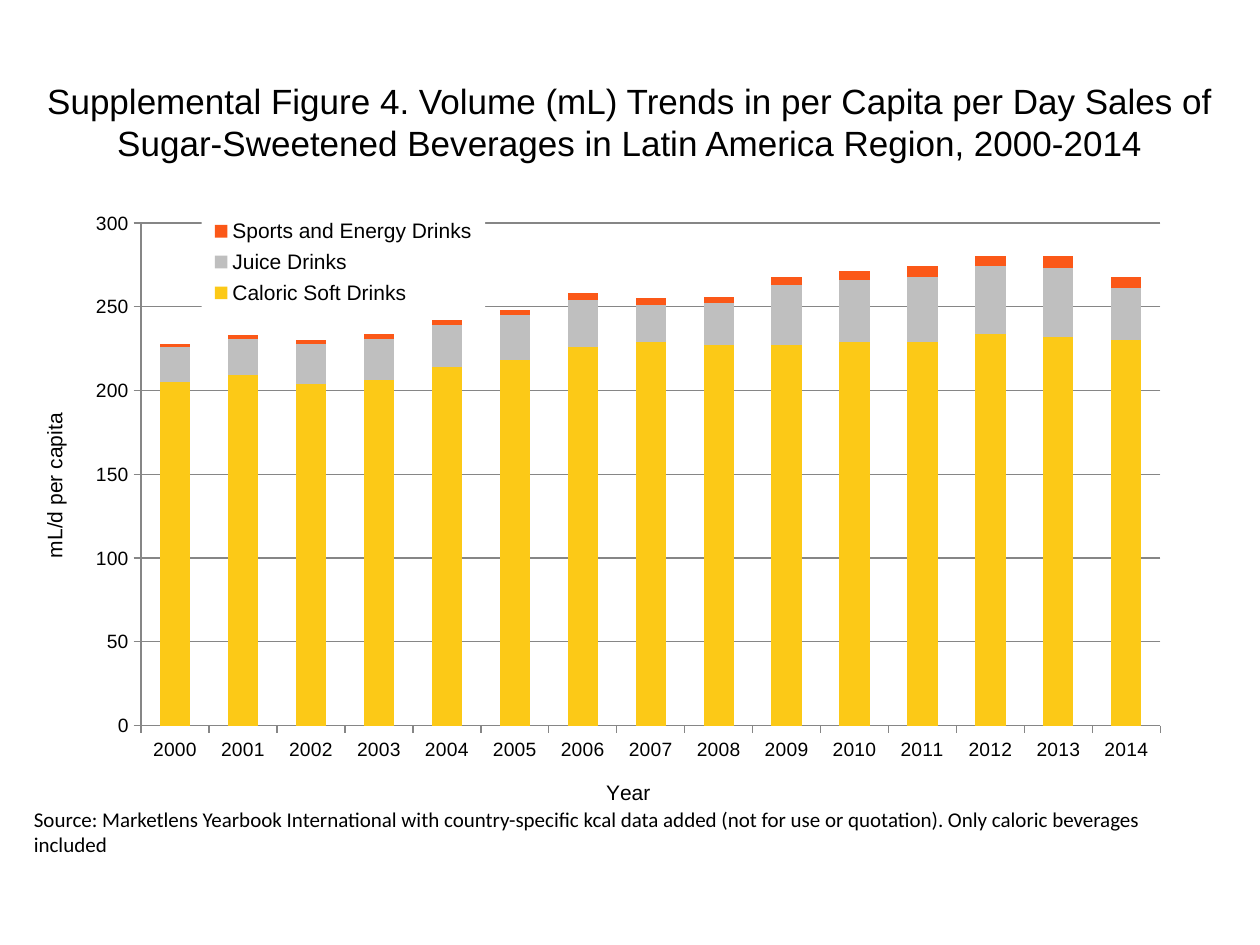
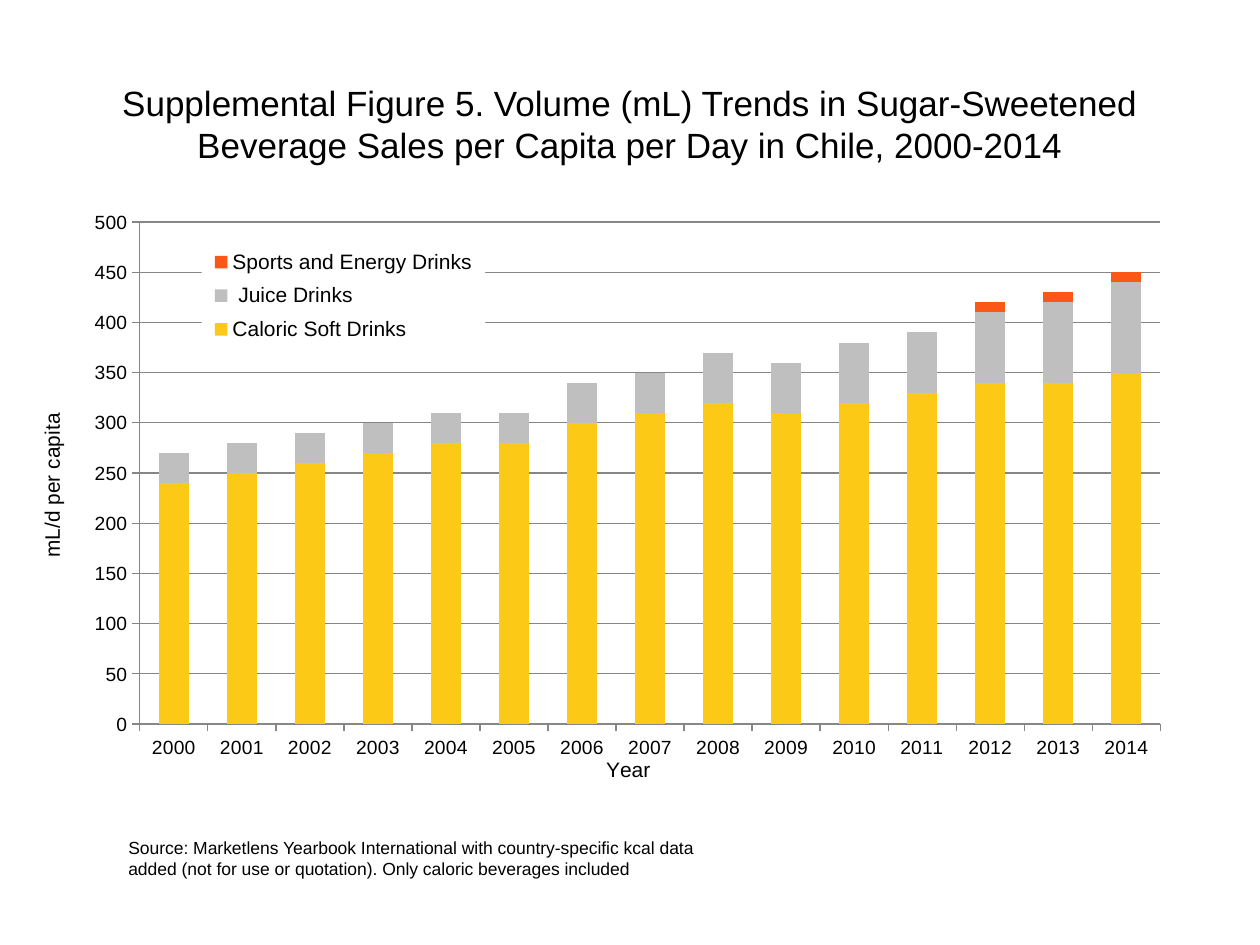
from dataclasses import dataclass

from lxml import etree
from pptx import Presentation
from pptx.chart.data import CategoryChartData
from pptx.dml.color import RGBColor
from pptx.enum.chart import XL_CHART_TYPE, XL_LEGEND_POSITION, XL_TICK_MARK
from pptx.enum.text import MSO_ANCHOR, MSO_AUTO_SIZE, PP_ALIGN
from pptx.oxml import parse_xml
from pptx.oxml.ns import nsdecls, qn
from pptx.util import Inches, Pt

STACKED = XL_CHART_TYPE.COLUMN_STACKED
RIGHT = XL_LEGEND_POSITION.RIGHT
OUTSIDE = XL_TICK_MARK.OUTSIDE
TOP, MIDDLE = MSO_ANCHOR.TOP, MSO_ANCHOR.MIDDLE
NO_FIT = MSO_AUTO_SIZE.NONE
CENTER, LEFT = PP_ALIGN.CENTER, PP_ALIGN.LEFT
TITLE_ONLY = 5

COLORS = {
    "text": "000000",
    "axis": "868686",
    "soft": "FCC917",
    "juice": "BFBFBF",
    "sports": "FB5818",
}
SERIES_COLORS = ("soft", "juice", "sports")
YEARS = [str(year) for year in range(2000, 2015)]
SOURCE = (
    "Source: Marketlens Yearbook International with country-specific kcal data "
    "added (not for use or quotation). Only caloric beverages included"
)


@dataclass(frozen=True)
class Box:
    """Left, top, width and height on the slide, in inches."""
    x: float
    y: float
    w: float = 0
    h: float = 0

    def emu(self) -> tuple:
        return tuple(Inches(v) for v in (self.x, self.y, self.w, self.h))


@dataclass(frozen=True)
class Figure:
    title: str
    title_box: Box
    title_anchor: MSO_ANCHOR
    chart_box: Box
    plot_box: Box
    legend_box: Box
    year_label: Box
    value_label: Box
    axis_max: int
    series: dict
    source_box: Box
    source_font: dict


FIGURES = [
    Figure(
        title="Supplemental Figure 4. Volume (mL) Trends in per Capita per Day Sales "
              "of Sugar-Sweetened Beverages in Latin America Region, 2000-2014",
        title_box=Box(0, 0.58, 10, 1.08),
        title_anchor=TOP,
        chart_box=Box(0.25, 0.6, 9.82, 6.08),
        plot_box=Box(1.12, 1.77, 8.09, 3.99),
        legend_box=Box(1.6, 1.68, 2.25, 0.8),
        year_label=Box(4.78, 6.16),
        value_label=Box(0.3, 3.25),
        axis_max=300,
        series={
            "Caloric Soft Drinks": (205, 209, 204, 206, 214, 218, 226, 229,
                                    227, 227, 229, 229, 234, 232, 230),
            "Juice Drinks": (21, 22, 24, 25, 25, 27, 28, 22,
                             25, 36, 37, 39, 40, 41, 31),
            "Sports and Energy Drinks": (2, 2, 2, 3, 3, 3, 4, 4,
                                         4, 5, 5, 6, 6, 7, 7),
        },
        source_box=Box(0.17, 6.35, 9.42, 0.5),
        source_font={"name": "Calibri", "size": Pt(12)},
    ),
    Figure(
        title="Supplemental Figure 5. Volume (mL) Trends in Sugar-Sweetened\v"
              "Beverage Sales per Capita per Day in Chile, 2000-2014",
        title_box=Box(0, 0.41, 10, 1.14),
        title_anchor=MIDDLE,
        chart_box=Box(0, 0.92, 10, 5.33),
        plot_box=Box(1.11, 1.77, 8.1, 4.02),
        legend_box=Box(1.6, 1.91, 2.25, 0.9),
        year_label=Box(4.78, 6.02),
        value_label=Box(0.28, 3.28),
        axis_max=500,
        series={
            "Caloric Soft Drinks": (240, 250, 260, 270, 280, 280, 300, 310,
                                    320, 310, 320, 330, 340, 340, 350),
            " Juice Drinks": (30, 30, 30, 30, 30, 30, 40, 40,
                              50, 50, 60, 60, 70, 80, 90),
            "Sports and Energy Drinks": (0,) * 12 + (10,) * 3,
        },
        source_box=Box(0.92, 6.59, 5, 0.44),
        source_font={"name": "Arial", "size": Pt(10)},
    ),
]


def rgb(key: str) -> RGBColor:
    return RGBColor.from_string(COLORS[key])


def set_font(font, **values) -> None:
    values = {"name": "Arial", "bold": False, **values}
    for name, value in values.items():
        setattr(font, name, value)
    font.color.rgb = rgb("text")


def set_layout(el, index: int, box: Box, chart_box: Box) -> None:
    """Pin a chart part to a place on the slide."""
    for old in el.findall(qn("c:layout")):
        el.remove(old)
    layout = parse_xml(f"<c:layout {nsdecls('c')}/>")
    manual = etree.SubElement(layout, qn("c:manualLayout"))
    values = {}
    if index == 0:
        values["layoutTarget"] = "inner"
    values.update(xMode="edge", yMode="edge",
                  x=(box.x - chart_box.x) / chart_box.w,
                  y=(box.y - chart_box.y) / chart_box.h)
    if box.w:
        values.update(w=box.w / chart_box.w, h=box.h / chart_box.h)
    for tag, value in values.items():
        text = value if isinstance(value, str) else f"{value:.4f}"
        etree.SubElement(manual, qn(f"c:{tag}")).set("val", text)
    el.insert(index, layout)


def format_axis(axis, label: str, place: Box, chart_box: Box, rot: int) -> None:
    tf = axis.axis_title.text_frame
    tf.text = label
    set_font(tf.paragraphs[0].runs[0].font, size=Pt(12))
    body = tf._txBody.bodyPr
    body.set("rot", str(rot))
    body.set("vert", "horz")
    set_layout(axis.axis_title._element, 1, place, chart_box)
    set_font(axis.tick_labels.font, size=Pt(11))
    axis.major_tick_mark = OUTSIDE
    axis.format.line.color.rgb = rgb("axis")
    axis.format.line.width = Pt(0.75)


def add_legend(chart, fig: Figure) -> None:
    chart.has_legend = True
    legend = chart.legend
    legend.position = RIGHT
    legend.include_in_layout = False
    set_font(legend.font, size=Pt(12))
    el = legend._element
    set_layout(el, 1, fig.legend_box, fig.chart_box)
    # White ground hides the gridlines behind the legend
    el.find(qn("c:overlay")).addnext(parse_xml(
        f"<c:spPr {nsdecls('c', 'a')}><a:solidFill><a:srgbClr val='FFFFFF'/>"
        "</a:solidFill><a:ln><a:noFill/></a:ln></c:spPr>"))


def add_sales_chart(slide, fig: Figure) -> None:
    data = CategoryChartData(number_format="#,##0")
    data.categories = YEARS
    for name, values in fig.series.items():
        data.add_series(name, values)
    chart = slide.shapes.add_chart(STACKED, *fig.chart_box.emu(), data).chart
    chart.has_title = False
    set_font(chart.font, name="Calibri", size=Pt(10))

    # Columns
    plot = chart.plots[0]
    plot.gap_width, plot.overlap = 125, 100
    plot.vary_by_categories = False
    for s, key in zip(plot.series, SERIES_COLORS):
        s.invert_if_negative = False
        s.format.fill.solid()
        s.format.fill.fore_color.rgb = rgb(key)
    set_layout(chart._chartSpace.chart.plotArea, 0, fig.plot_box, fig.chart_box)

    # Axes
    values = chart.value_axis
    format_axis(chart.category_axis, "Year", fig.year_label, fig.chart_box, 0)
    format_axis(values, "mL/d per capita", fig.value_label, fig.chart_box, -5400000)
    values.minimum_scale, values.maximum_scale = 0, fig.axis_max
    values.major_unit = 50
    values.tick_labels.number_format = "#,##0"
    values.tick_labels.number_format_is_linked = False
    values.has_major_gridlines = True
    grid = values.major_gridlines.format.line
    grid.color.rgb = rgb("axis")
    grid.width = Pt(0.75)
    add_legend(chart, fig)


def write_text(sp, text: str, align: PP_ALIGN, anchor: MSO_ANCHOR, **font) -> None:
    tf = sp.text_frame
    tf.text = text
    tf.word_wrap = True
    tf.auto_size = NO_FIT
    tf.vertical_anchor = anchor
    p = tf.paragraphs[0]
    p.alignment = align
    for r in p.runs:
        set_font(r.font, **font)


def add_figure(prs, fig: Figure) -> None:
    slide = prs.slides.add_slide(prs.slide_layouts[TITLE_ONLY])
    add_sales_chart(slide, fig)

    # Title, in front of the chart
    title = slide.shapes.title
    title.left, title.top, title.width, title.height = fig.title_box.emu()
    write_text(title, fig.title, CENTER, fig.title_anchor, size=Pt(20))
    slide.shapes._spTree.append(title._element)

    # Source line
    sp = slide.shapes.add_textbox(*fig.source_box.emu())
    write_text(sp, SOURCE, LEFT, TOP, **fig.source_font)


def main() -> None:
    prs = Presentation()
    prs.slide_width, prs.slide_height = Inches(10), Inches(7.5)
    for fig in FIGURES:
        add_figure(prs, fig)
    prs.save("out.pptx")


if __name__ == "__main__":
    main()
